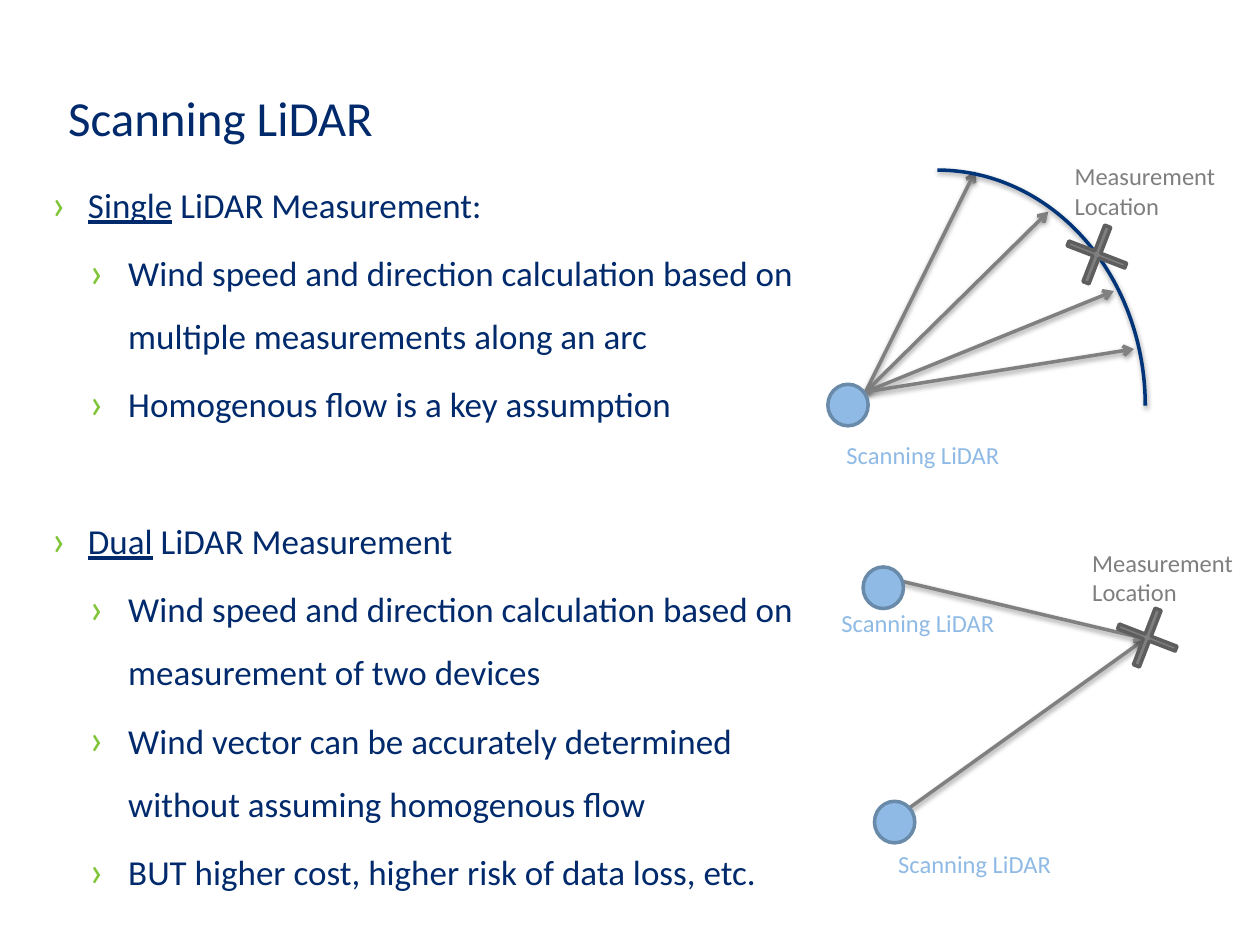
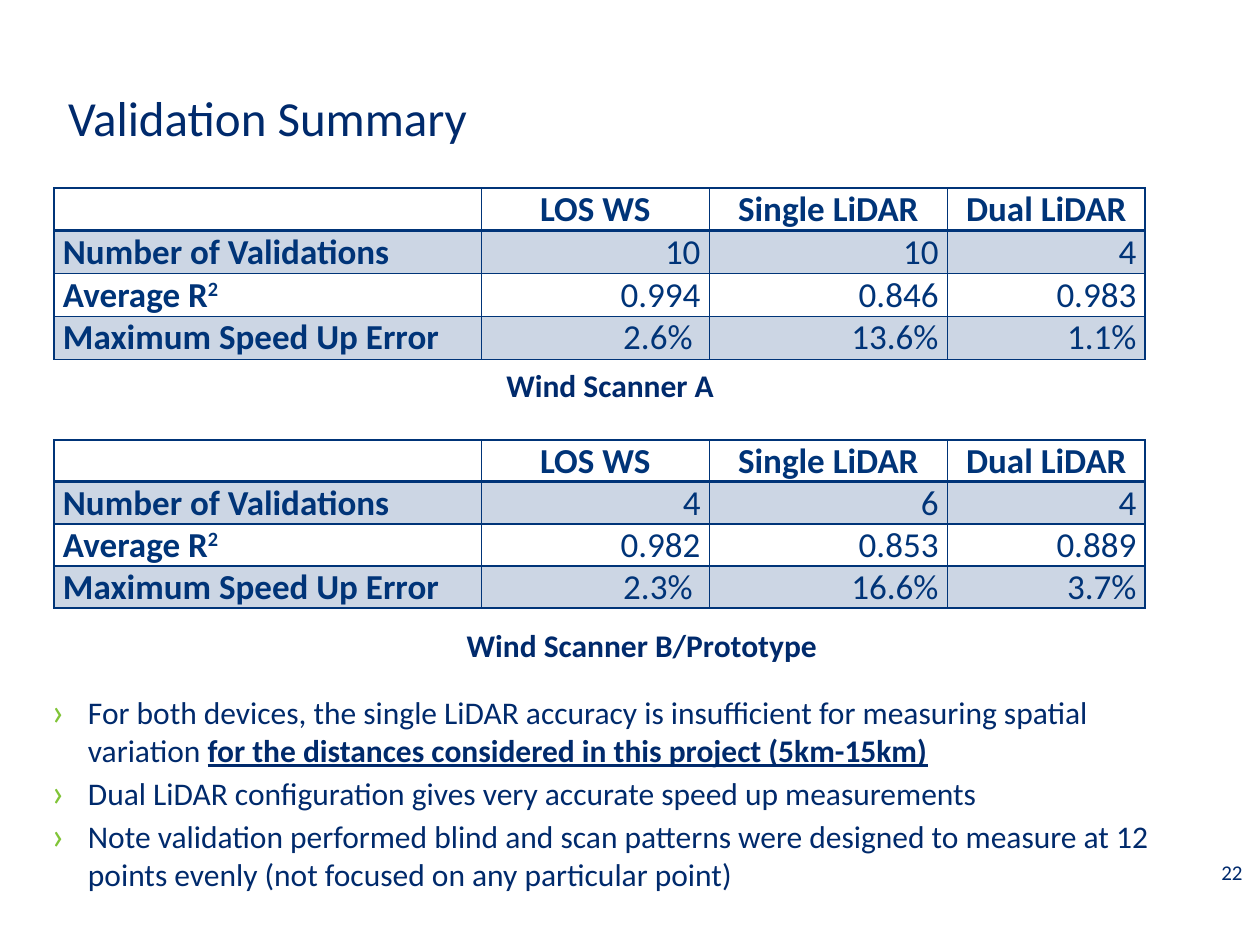
from dataclasses import dataclass
from typing import NamedTuple

from lxml import etree
from pptx import Presentation
from pptx.dml.color import RGBColor as Rgb
from pptx.enum.shapes import MSO_CONNECTOR as Connector, MSO_SHAPE as Preset
from pptx.enum.text import MSO_ANCHOR as Anchor, PP_ALIGN as Align
from pptx.oxml.ns import qn
from pptx.util import Inches, Pt


@dataclass(frozen=True)
class Theme:
    font: str = "Calibri"
    text: str = "002A6C"
    blue: str = "003478"
    band: str = "CCD6E4"
    bullet: str = "80C437"
    lidar: str = "8EBAE5"
    lidar_edge: str = "698AA9"
    beam: str = "808080"
    marker: str = "7F7F7F"
    marker_edge: str = "5E5E5E"
    title_size: int = 28
    body_size: int = 20
    small_size: int = 18
    label_size: int = 14
    number_size: int = 12
    line: int = 2


class Box(NamedTuple):
    left: float
    top: float
    width: float
    height: float

    def inches(self):
        return [Inches(length) for length in self]

    def inside(self, left, top, width, height):
        return Box(self.left + left, self.top + top, width, height)


THEME = Theme()
TITLE_BOX = Box(0.5, 0.3, 7.18, 1.25)
LIDAR_SIZE = (0.32, 0.33)
MARKER_SIZE = (0.49, 0.48)
LIDAR_LABEL_SIZE = (3.1, 0.34)
PLACE_LABEL_SIZE = (1.68, 0.57)
COLUMN_WIDTHS = (3.39, 1.81, 1.89, 1.57)
HEADINGS = ("", "LOS WS", "Single LiDAR", "Dual LiDAR")


def add_xml(parent, tag, **attributes):
    return etree.SubElement(parent, qn(tag), {k: str(v) for k, v in attributes.items()})


def style_font(font, size, color, bold=False):
    font.name = THEME.font
    font.size = Pt(size)
    font.bold = bold
    font.color.rgb = Rgb.from_string(color)


def add_page(deck, title):
    page = deck.slides.add_slide(deck.slide_layouts[5])
    heading = page.shapes.title
    heading.left, heading.top, heading.width, heading.height = TITLE_BOX.inches()
    frame = heading.text_frame
    frame.text = title
    frame.vertical_anchor = Anchor.MIDDLE
    frame.margin_left = frame.margin_right = Inches(0.04)
    frame.margin_top = frame.margin_bottom = Inches(0.04)
    para = frame.paragraphs[0]
    para.alignment = Align.LEFT
    style_font(para.font, THEME.title_size, THEME.text)
    return page


def add_text_frame(page, box):
    frame = page.shapes.add_textbox(*box.inches()).text_frame
    frame.word_wrap = True
    return frame


def add_label(page, box, text, size, color, bold=False, align=Align.LEFT):
    para = add_text_frame(page, box).paragraphs[0]
    para.text = text
    para.alignment = align
    style_font(para.font, size, color, bold)


def add_bullet(para, level):
    indent, hanging = ((0.29, 0.29), (0.61, 0.31))[level]
    para.level = level
    properties = para._p.get_or_add_pPr()
    properties.set("marL", str(Inches(indent)))
    properties.set("indent", str(-Inches(hanging)))
    add_xml(add_xml(properties, "a:buClr"), "a:srgbClr", val=THEME.bullet)
    add_xml(properties, "a:buSzPct", val=125000)
    add_xml(properties, "a:buFont", typeface=THEME.font)
    add_xml(properties, "a:buChar", char="›")


def add_bullets(page, box, items, size, line_spacing=1.0, group_gap=3):
    frame = add_text_frame(page, box)
    for index, (level, spans) in enumerate(items):
        para = frame.add_paragraph() if index else frame.paragraphs[0]
        add_bullet(para, level)
        para.line_spacing = line_spacing
        if index:
            para.space_before = Pt(3 if level else group_gap)
        style_font(para.font, size, THEME.text)
        for text, emphasis in spans:
            span = para.add_run()
            span.text = text
            if "u" in emphasis:
                span.font.underline = True
            if "b" in emphasis:
                span.font.bold = True


def style_line(shape, color):
    shape.line.color.rgb = Rgb.from_string(color)
    shape.line.width = Pt(THEME.line)


def add_shadow(shape):
    effects = add_xml(shape._element.spPr, "a:effectLst")
    shadow = add_xml(effects, "a:outerShdw", blurRad=Pt(3.1), dist=Pt(1.6),
                     dir=5400000, rotWithShape=0)
    add_xml(add_xml(shadow, "a:srgbClr", val="000000"), "a:alpha", val=38000)


def add_beam(page, box, start, end):
    points = [Inches(length) for x, y in (start, end)
              for length in (box.left + x, box.top + y)]
    beam = page.shapes.add_connector(Connector.STRAIGHT, *points)
    style_line(beam, THEME.beam)
    add_xml(beam.line._get_or_add_ln(), "a:tailEnd", type="arrow")
    add_shadow(beam)


def add_solid(page, preset, box, fill, edge):
    shape = page.shapes.add_shape(preset, *box.inches())
    shape.shadow.inherit = False
    shape.fill.solid()
    shape.fill.fore_color.rgb = Rgb.from_string(fill)
    style_line(shape, edge)
    return shape


def add_lidar(page, box, spot, label_spot):
    add_solid(page, Preset.OVAL, box.inside(*spot, *LIDAR_SIZE), THEME.lidar, THEME.lidar_edge)
    add_label(page, box.inside(*label_spot, *LIDAR_LABEL_SIZE), "Scanning LiDAR",
              THEME.label_size, THEME.lidar)


def add_marker(page, box, spot, label_spot):
    cross = add_solid(page, Preset.CROSS, box.inside(*spot, *MARKER_SIZE),
                      THEME.marker, THEME.marker_edge)
    cross.adjustments[0] = 0.457
    cross.rotation = 21.1
    add_label(page, box.inside(*label_spot, *PLACE_LABEL_SIZE), "Measurement Location",
              THEME.label_size, THEME.marker)


def add_arc(page, box):
    arc = page.shapes.add_shape(Preset.ARC, *box.inches())
    arc.fill.background()
    style_line(arc, THEME.blue)
    add_shadow(arc)


def draw_single_lidar(page, box):
    for target in ((1.17, 0.13), (1.75, 0.45), (2.27, 1.08), (2.43, 1.54)):
        add_beam(page, box, (0.3, 1.88), target)
    add_lidar(page, box, (0, 1.82), (0.05, 2.21))
    add_arc(page, box.inside(-0.78, 0.12, 3.3, 3.74))
    add_marker(page, box, (1.89, 0.55), (1.86, 0))


def draw_dual_lidar(page, box):
    target = (2.51, 0.77)
    for start in ((0.64, 2.11), (0.31, 0.25)):
        add_beam(page, box, start, target)
    add_lidar(page, box, (0.27, 0.2), (0, 0.48))
    add_lidar(page, box, (0.36, 2.06), (0.45, 2.39))
    add_marker(page, box, (2.28, 0.52), (1.99, 0))


def add_borders(cell, bottom):
    properties = cell._tc.get_or_add_tcPr()
    for index, side in enumerate(("lnL", "lnR", "lnT", "lnB")):
        width = bottom if side == "lnB" else 1
        line = add_xml(properties, f"a:{side}", w=Pt(width))
        add_xml(add_xml(line, "a:solidFill"), "a:srgbClr", val=THEME.blue)
        properties.insert(index, line)


def fill_cell(cell, text, row, column):
    if row % 2:
        cell.fill.solid()
        cell.fill.fore_color.rgb = Rgb.from_string(THEME.band)
    else:
        cell.fill.background()
    add_borders(cell, bottom=1 if row else 2)
    cell.margin_left = cell.margin_right = Inches(0.07)
    cell.margin_top = cell.margin_bottom = 0
    cell.vertical_anchor = Anchor.BOTTOM if row and not column else Anchor.MIDDLE
    para = cell.text_frame.paragraphs[0]
    if row == 0:
        para.alignment = Align.CENTER
    else:
        para.alignment = Align.RIGHT if column else Align.LEFT
    style_font(para.font, THEME.body_size, THEME.blue, bold=row == 0 or column == 0)
    base, _, power = text.partition("^")
    para.add_run().text = base
    if power:
        span = para.add_run()
        span.text = power
        span.font._element.set("baseline", "30000")


def add_validation_table(page, box, counts, fits, errors):
    rows = (HEADINGS, ("Number of Validations", *counts), ("Average R^2", *fits),
            ("Maximum Speed Up Error", *errors))
    table = page.shapes.add_table(len(rows), len(HEADINGS), *box.inches()).table
    table.first_row = table.horz_banding = False
    for column, width in zip(table.columns, COLUMN_WIDTHS):
        column.width = Inches(width)
    for row, texts in enumerate(rows):
        table.rows[row].height = Inches(box.height / len(rows))
        for column, text in enumerate(texts):
            fill_cell(table.cell(row, column), text, row, column)


def build_scanning_page(deck):
    page = add_page(deck, "Scanning LiDAR")
    items = (
        (0, (("Single", "u"), (" LiDAR Measurement:", ""))),
        (1, (("Wind speed and direction calculation based on multiple measurements "
              "along an arc", ""),)),
        (1, (("Homogenous flow is a key assumption", ""),)),
        (0, (("Dual", "u"), (" LiDAR Measurement", ""))),
        (1, (("Wind speed and direction calculation based on measurement of two devices", ""),)),
        (1, (("Wind vector can be accurately determined without assuming homogenous flow", ""),)),
        (1, (("BUT higher cost, higher risk of data loss, etc.", ""),)),
    )
    add_bullets(page, Box(0.31, 1.24, 6.27, 5.05), items, THEME.body_size,
                line_spacing=1.5, group_gap=42)
    draw_single_lidar(page, Box(6.57, 1.23, 3.54, 2.55))
    draw_dual_lidar(page, Box(6.58, 4.3, 3.67, 2.73))


def build_validation_page(deck):
    page = add_page(deck, "Validation Summary")
    add_validation_table(page, Box(0.43, 1.49, 8.66, 1.33), ("10", "10", "4"),
                         ("0.994", "0.846", "0.983"), ("2.6% ", "13.6%", "1.1%"))
    add_label(page, Box(3.92, 2.86, 2.9, 0.4), "Wind Scanner A",
              THEME.small_size, THEME.text, bold=True)
    add_validation_table(page, Box(0.43, 3.49, 8.66, 1.33), ("4", "6", "4"),
                         ("0.982", "0.853", "0.889"), ("2.3% ", "16.6%", "3.7%"))
    add_label(page, Box(3.38, 4.92, 3.43, 0.4), "Wind Scanner B/Prototype",
              THEME.small_size, THEME.text, bold=True, align=Align.CENTER)
    items = (
        (0, (("For both devices, the single LiDAR accuracy is insufficient for measuring "
              "spatial variation ", ""),
             ("for the distances considered in this project (5km-15km)", "bu"))),
        (0, (("Dual LiDAR configuration gives very accurate speed up measurements", ""),)),
        (0, (("Note validation performed blind and scan patterns were designed to measure "
              "at 12 points evenly (not focused on any particular point)", ""),)),
    )
    add_bullets(page, Box(0.31, 5.45, 9.33, 1.7), items, THEME.small_size)
    add_label(page, Box(7.63, 6.77, 2.33, 0.52), "22", THEME.number_size, THEME.text,
              align=Align.RIGHT)


def main():
    deck = Presentation()
    deck.slide_width, deck.slide_height = Inches(10), Inches(7.5)
    build_scanning_page(deck)
    build_validation_page(deck)
    deck.save("out.pptx")


if __name__ == "__main__":
    main()
